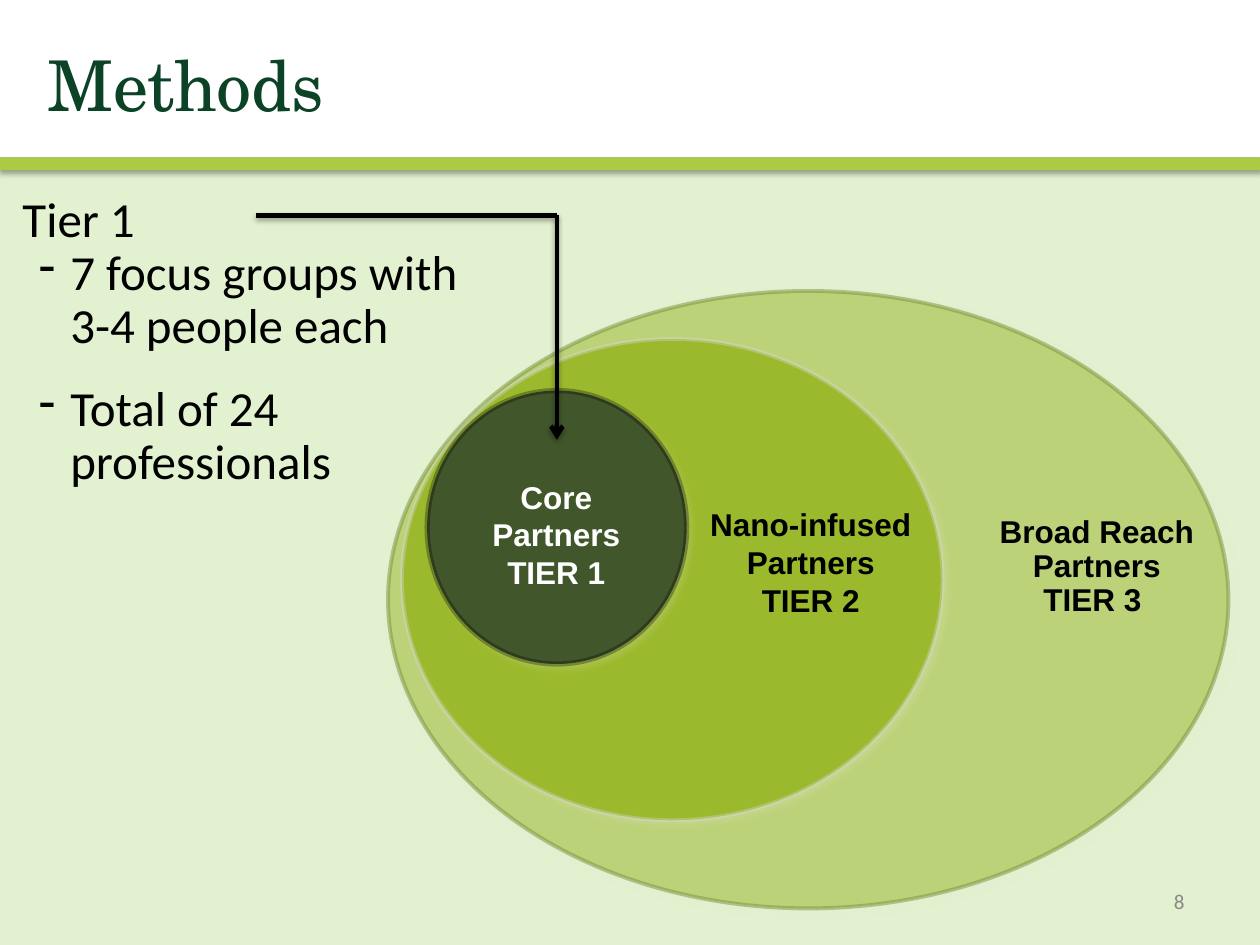
from dataclasses import dataclass
from lxml.etree import SubElement as Sub
from pptx import Presentation
from pptx.dml.color import RGBColor as RGB
from pptx.enum.shapes import MSO_CONNECTOR as Link, MSO_SHAPE as Form
from pptx.enum.text import MSO_ANCHOR as Anchor, MSO_AUTO_SIZE as Fit, PP_ALIGN as Align
from pptx.oxml.ns import qn
from pptx.util import Inches, Pt

COLS, ROWS = 100, 75
WIDE, HIGH = Inches(10), Inches(7.5)


@dataclass(frozen=True)
class Theme:
    """Colours, fonts, type sizes and shadows of the slide."""
    page: str = "E2F1CF"
    white: str = "FFFFFF"
    black: str = "000000"
    gray: str = "898989"
    lime: str = "ABCB45"
    pine: str = "0C4225"
    leaf: str = "9BB92C"
    moss: str = "41572B"
    edge: str = "77933C"
    rim: str = "D9D9D9"
    serif: str = "TeX Gyre Schola"
    sans: str = "Calibri"
    bold: str = "Arial"
    title: int = 40
    body: int = 28
    label: int = 18
    note: int = 12
    band: tuple = ("000000", 35, 3.1, 1.8, 90)
    glow: tuple = ("EEECE1", 20, 4, 3, 45)
    line: tuple = ("000000", 38, 3.1, 1.6, 90)


T = Theme()


@dataclass(frozen=True)
class Box:
    """A rectangle in grid columns and rows."""
    x: float
    y: float
    w: float
    h: float

    def sub(self, x, y, w, h):
        """Return a box offset from this one's corner."""
        return Box(self.x + x, self.y + y, w, h)

    def emu(self):
        """Return left, top, width and height as lengths."""
        cw, rh = WIDE / COLS, HIGH / ROWS
        return [round(v) for v in (self.x * cw, self.y * rh, self.w * cw, self.h * rh)]


def fade(color, share):
    """Set the opacity of a colour in percent."""
    Sub(color, qn("a:alpha"), val=str(share * 1000))


def shade(shape, look):
    """Give a shape an outer shadow."""
    hue, share, blur, dist, turn = look
    fx = Sub(shape._element.spPr, qn("a:effectLst"))
    drop = Sub(fx, qn("a:outerShdw"), blurRad=str(Pt(blur)), dist=str(Pt(dist)),
               dir=str(turn * 60000), algn="ctr", rotWithShape="0")
    fade(Sub(drop, qn("a:srgbClr"), val=hue), share)


def block(slide, box, form, fill, look, share=100, line=None):
    """Draw a filled shape with an optional see-through outline."""
    shape = slide.shapes.add_shape(form, *box.emu())
    shape.fill.solid()
    shape.fill.fore_color.rgb = RGB.from_string(fill)
    if share < 100:
        fade(shape._element.spPr.find(".//" + qn("a:srgbClr")), share)
    if line:
        hue, width, part = line
        shape.line.color.rgb = RGB.from_string(hue)
        shape.line.width = Pt(width)
        fade(shape.line._ln.find(".//" + qn("a:srgbClr")), part)
    else:
        shape.line.fill.background()
    shade(shape, look)


def frame(slide, box, anchor=Anchor.TOP, fit=Fit.NONE, inset=None):
    """Add a wrapping text box and return its frame."""
    text = slide.shapes.add_textbox(*box.emu()).text_frame
    text.word_wrap = True
    text.auto_size = fit
    text.vertical_anchor = anchor
    if inset is not None:
        text.margin_left = text.margin_top = text.margin_bottom = 0
        text.margin_right = Inches(inset)
    return text


def para(text, words, font, size, hue, bold=False, align=None, space=None,
         after=None, dash=False, left=0):
    """Write one paragraph, with a line break at each newline."""
    p = text.paragraphs[0]
    if p.runs:
        p = text.add_paragraph()
    props = p._p.get_or_add_pPr()
    if dash:
        props.set("marL", str(Inches(0.38)))
        props.set("indent", str(Inches(-0.25)))
        Sub(props, qn("a:buFontTx"))
        Sub(props, qn("a:buChar"), char="-")
    elif left:
        props.set("marL", str(Inches(left)))
    p.alignment, p.line_spacing = align, space
    if after:
        p.space_after = Pt(after)
    for i, part in enumerate(words.split("\n")):
        if i:
            p.add_line_break()
        run = p.add_run()
        run.text = part
        run.font.name, run.font.size, run.font.bold = font, Pt(size), bold
        run.font.color.rgb = RGB.from_string(hue)


def header(slide, box):
    """Draw the title band and its green rule."""
    rule = 1
    block(slide, box.sub(0, 0, box.w, box.h - rule), Form.RECTANGLE, T.white, T.band)
    block(slide, box.sub(0, box.h - rule, box.w, rule), Form.RECTANGLE, T.lime, T.band)
    text = frame(slide, box.sub(2.8, 3, 94.7, 8.1), Anchor.MIDDLE)
    para(text, "Methods", T.serif, T.title, T.pine, space=0.9)


def notes(slide, box):
    """Write the facts on the first tier."""
    style = dict(font=T.sans, size=T.body, hue=T.black, space=0.9)
    text = frame(slide, box.sub(0, 0, box.w, 13.7), fit=Fit.SHAPE_TO_FIT_TEXT)
    para(text, "Tier 1", **style)
    para(text, "7 focus groups with 3-4 people each", after=6, dash=True, **style)
    text = frame(slide, box.sub(0, 15, 30.6, 9.5), fit=Fit.SHAPE_TO_FIT_TEXT)
    para(text, "Total of 24 professionals", after=12, dash=True, **style)


def tiers(slide, box):
    """Draw the nested ovals and their labels."""
    rings = (
        ((0, 0, box.w, box.h), T.leaf, 53, (T.edge, 2.25, 49)),
        ((1.1, 3.8, 42.9, 38.2), T.leaf, 100, (T.rim, 2.25, 37)),
        ((3.1, 7.9, 20.6, 21.7), T.moss, 100, (T.black, 3, 30)),
    )
    for spot, fill, share, line in rings:
        block(slide, box.sub(*spot), Form.OVAL, fill, T.glow, share, line)
    labels = (
        ((46.8, 17.9, 18.9, 13.2), ["Broad Reach Partners\nTIER 3 "], T.black, 0.9),
        ((5.3, 14.8, 16.1, 12.3), ["Core Partners", "TIER 1"], T.white, None),
        ((24.4, 17, 18.3, 12.3), ["Nano-infused Partners", "TIER 2"], T.black, None),
    )
    for spot, lines, hue, space in labels:
        text = frame(slide, box.sub(*spot), inset=0.04)
        for words in lines:
            para(text, words, T.bold, T.label, hue, True, Align.CENTER, space, left=0.04)


def arrow(slide, box):
    """Draw the bent arrow along the top and right sides of its box."""
    x, y, w, h = box.emu()
    stops = (x, y), (x + w, y), (x + w, y + h)
    for start, end in zip(stops, stops[1:]):
        line = slide.shapes.add_connector(Link.STRAIGHT, *start, *end)
        line.line.color.rgb = RGB.from_string(T.black)
        line.line.width = Pt(2.5)
        if end == stops[-1]:
            Sub(line.line._ln, qn("a:tailEnd"), type="arrow")
        shade(line, T.line)


def footer(slide, box):
    """Write the slide number."""
    text = frame(slide, box, Anchor.MIDDLE)
    para(text, "8", T.sans, T.note, T.gray, align=Align.RIGHT)


def main():
    """Build and save the slide."""
    deck = Presentation()
    deck.slide_width, deck.slide_height = WIDE, HIGH
    slide = deck.slides.add_slide(deck.slide_layouts[6])
    slide.background.fill.solid()
    slide.background.fill.fore_color.rgb = RGB.from_string(T.page)
    footer(slide, Box(71.7, 69.5, 23.3, 4))
    header(slide, Box(0, 0, COLS, 13.5))
    tiers(slide, Box(30.8, 23.1, 66.7, 49))
    notes(slide, Box(0.8, 15, 38.9, 24.5))
    arrow(slide, Box(20.3, 17.1, 23.9, 17.8))
    deck.save("out.pptx")


if __name__ == "__main__":
    main()
